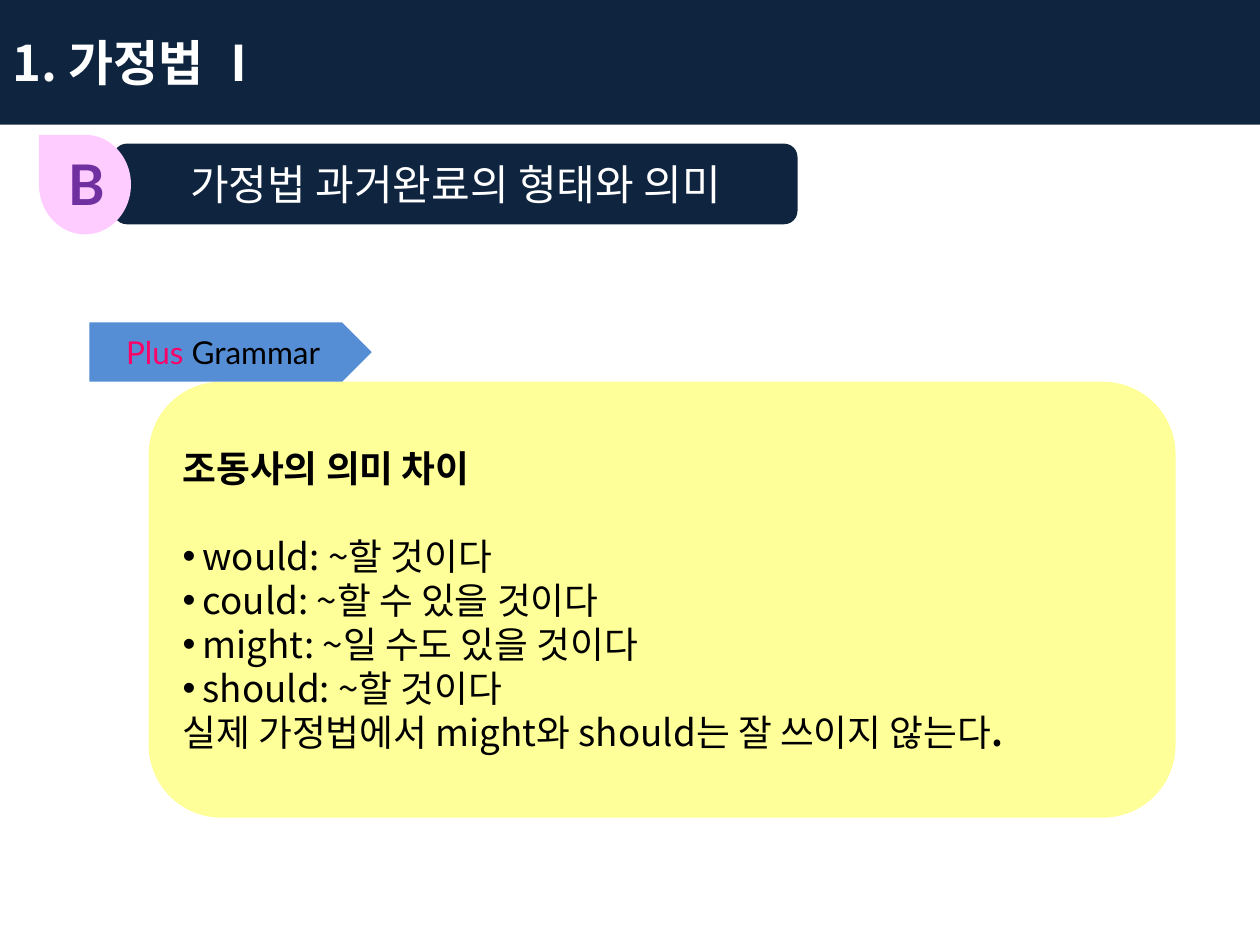
import pptx
import pptx.util
import pptx.dml.color
import pptx.enum.shapes
import pptx.enum.text
import pptx.oxml.ns
from lxml import etree

Inches, Pt = pptx.util.Inches, pptx.util.Pt
SHAPE = pptx.enum.shapes.MSO_SHAPE
ALIGN = pptx.enum.text.PP_ALIGN
qn = pptx.oxml.ns.qn
KOREAN, LATIN = "Noto Sans CJK KR", "Lato"
NAVY, WHITE, BLACK = "0F243E", "FFFFFF", "000000"


def paint(fmt, color):
    """Solid colour for a fill or a font."""
    fill = fmt.fill if hasattr(fmt, "fill") else fmt
    fill.solid()
    fill.fore_color.rgb = pptx.dml.color.RGBColor.from_string(color)


def add_run(p, text, color, **font):
    r = p.add_run()
    r.text = text
    for name, value in font.items():
        setattr(r.font, name, value)
    paint(r.font, color)
    etree.SubElement(r.font._element, qn("a:ea"), typeface=font["name"])


prs = pptx.Presentation()
prs.slide_width, prs.slide_height = Inches(10), Inches(7.5)
s = prs.slides.add_slide(prs.slide_layouts[1])
title, body = s.placeholders

# Placeholders: title bar and yellow note
for sp, box, color, geometry in (
    (title, (0, 0, 10, 0.99), NAVY, "rect"),
    (body, (1.18, 3.03, 8.15, 3.46), "FFFF99", "flowChartAlternateProcess"),
):
    sp.left, sp.top, sp.width, sp.height = map(Inches, box)
    geom = etree.SubElement(sp._element.spPr, qn("a:prstGeom"), prst=geometry)
    etree.SubElement(geom, qn("a:avLst"))
    paint(sp.fill, color)
    sp.text_frame.auto_size = pptx.enum.text.MSO_AUTO_SIZE.NONE
    sp.text_frame.vertical_anchor = pptx.enum.text.MSO_ANCHOR.MIDDLE

p = title.text_frame.paragraphs[0]
p.alignment = ALIGN.LEFT
add_run(p, "1. ", "FCFCFD", size=Pt(28), name=KOREAN, bold=True)
add_run(p, "가정법 Ⅰ", WHITE, size=Pt(28), name=KOREAN, bold=True)

# Section heading, badge and label shapes
for kind, box, color, rotation, runs in (
    (SHAPE.FLOWCHART_ALTERNATE_PROCESS, (0.9, 1.14, 5.43, 0.64), NAVY, 0,
     [("가정법 과거완료의 형태와 의미", WHITE, 24, KOREAN)]),
    (SHAPE.TEAR, (0.28, 1.1, 0.79, 0.73), "FFCCFF", 270, []),
    (SHAPE.PENTAGON, (0.71, 2.56, 2.24, 0.47), "558ED5", 0,
     [("Plus ", "FF0066", 18, LATIN), ("Grammar", BLACK, 18, LATIN)]),
):
    sp = s.shapes.add_shape(kind, *map(Inches, box))
    sp.shadow.inherit = False
    sp.rotation = rotation
    paint(sp.fill, color)
    sp.line.fill.background()
    p = sp.text_frame.paragraphs[0]
    p.alignment = ALIGN.CENTER
    for text, font_color, size, name in runs:
        add_run(p, text, font_color, size=Pt(size), name=name)

# Badge letter
sp = s.shapes.add_textbox(*map(Inches, (0.44, 1.14, 0.47, 0.64)))
sp.text_frame.word_wrap = True
add_run(sp.text_frame.paragraphs[0], "B", "7030A0", size=Pt(32), name=LATIN, bold=True)

# Note: heading, bulleted auxiliaries, closing remark
LINE = Pt(25.2)
tf = body.text_frame
for i, (text, bold, bullet) in enumerate((
    ("조동사의 의미 차이", True, False),
    ("would: ~할 것이다", False, True),
    ("could: ~할 수 있을 것이다", False, True),
    ("might: ~일 수도 있을 것이다", False, True),
    ("should: ~할 것이다", False, True),
    ("실제 가정법에서 might와 should는 잘 쓰이지 않는다", False, False),
)):
    p = tf.add_paragraph() if i else tf.paragraphs[0]
    spacing = {"line_spacing": LINE, "space_before": Pt(0),
               "space_after": Pt(0) if i else LINE}
    for name, value in spacing.items():
        setattr(p, name, value)
    indent = Inches(0.16) if bullet else 0
    pPr = p._p.get_or_add_pPr()
    pPr.set("marL", str(indent))
    pPr.set("indent", str(-indent))
    if bullet:
        etree.SubElement(pPr, qn("a:buChar"), char="•")
    else:
        etree.SubElement(pPr, qn("a:buNone"))
    add_run(p, text, BLACK, size=Pt(21), name=KOREAN, bold=bold)
add_run(p, ".", BLACK, size=Pt(21), name=KOREAN, bold=True)

prs.save("out.pptx")
